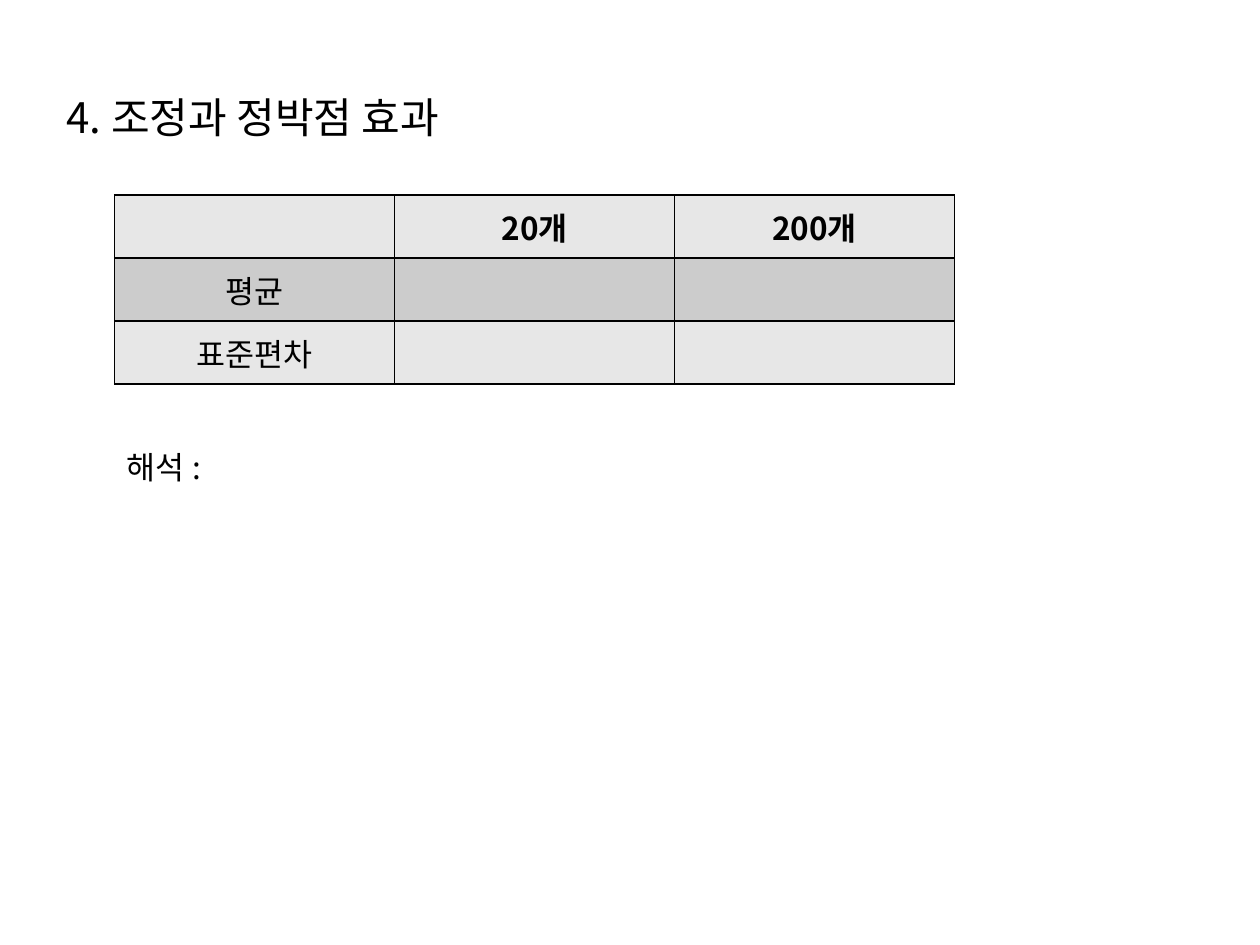
from dataclasses import dataclass

import lxml.etree
import pptx
import pptx.dml.color
import pptx.enum.text
import pptx.oxml.ns
import pptx.util

Pt = pptx.util.Pt
RGB = pptx.dml.color.RGBColor
Align = pptx.enum.text.PP_ALIGN
qn = pptx.oxml.ns.qn


@dataclass(frozen=True)
class Theme:
    font: str = "Noto Sans CJK KR"
    ink: str = "000000"
    light: str = "E7E7E7"
    dark: str = "CCCCCC"
    title: float = 24
    body: float = 18
    line: float = 1


@dataclass(frozen=True)
class Label:
    text: str
    left: float
    top: float
    width: float
    height: float
    size: float


THEME = Theme()

LABELS = [
    Label("4. 조정과 정박점 효과", 31, 49, 471, 36, THEME.title),
    Label("해석 :", 65.5, 252.5, 249, 29, THEME.body),
]

ROWS = [
    ["", "20개", "200개"],
    ["평균", "", ""],
    ["표준편차", "", ""],
]
LEFT, TOP = 65.5, 111.5
COL, ROW = 160, 36


def style(para, size: float, bold: bool = False) -> None:
    """Set the Latin and East Asian font of a paragraph."""
    font = para.font
    font.size = Pt(size)
    font.bold = bold
    font.color.rgb = RGB.from_string(THEME.ink)
    font.name = THEME.font
    props = para._p.find(".//" + qn("a:defRPr"))
    lxml.etree.SubElement(props, qn("a:ea"), typeface=THEME.font)


def add_label(slide, label: Label) -> None:
    box = slide.shapes.add_textbox(
        Pt(label.left), Pt(label.top), Pt(label.width), Pt(label.height))
    frame = box.text_frame
    frame.word_wrap = True
    frame.auto_size = pptx.enum.text.MSO_AUTO_SIZE.SHAPE_TO_FIT_TEXT
    frame.text = label.text
    style(frame.paragraphs[0], label.size)


def add_edges(cell) -> None:
    """Draw a solid line on all four sides of a cell."""
    props = cell._tc.get_or_add_tcPr()
    for spot, side in enumerate(("lnL", "lnR", "lnT", "lnB")):
        edge = props.makeelement(qn("a:" + side), {"w": str(Pt(THEME.line))})
        fill = lxml.etree.SubElement(edge, qn("a:solidFill"))
        lxml.etree.SubElement(fill, qn("a:srgbClr"), val=THEME.ink)
        props.insert(spot, edge)


def add_grid(slide, rows: list[list[str]]) -> None:
    high, wide = len(rows), len(rows[0])
    table = slide.shapes.add_table(
        high, wide, Pt(LEFT), Pt(TOP), Pt(COL * wide), Pt(ROW * high)).table
    for col in table.columns:
        col.width = Pt(COL)
    for r, texts in enumerate(rows):
        table.rows[r].height = Pt(ROW)
        shade = THEME.dark if r % 2 else THEME.light
        for c, text in enumerate(texts):
            cell = table.cell(r, c)
            cell.text = text
            cell.vertical_anchor = pptx.enum.text.MSO_ANCHOR.MIDDLE
            cell.fill.solid()
            cell.fill.fore_color.rgb = RGB.from_string(shade)
            add_edges(cell)
            para = cell.text_frame.paragraphs[0]
            para.alignment = Align.CENTER
            style(para, THEME.body, bold=r == 0)


def main() -> None:
    deck = pptx.Presentation()
    deck.slide_width, deck.slide_height = Pt(720), Pt(540)
    slide = deck.slides.add_slide(deck.slide_layouts[6])

    # Heading and comment line
    for label in LABELS:
        add_label(slide, label)

    # Results table
    add_grid(slide, ROWS)

    deck.save("out.pptx")


if __name__ == "__main__":
    main()
